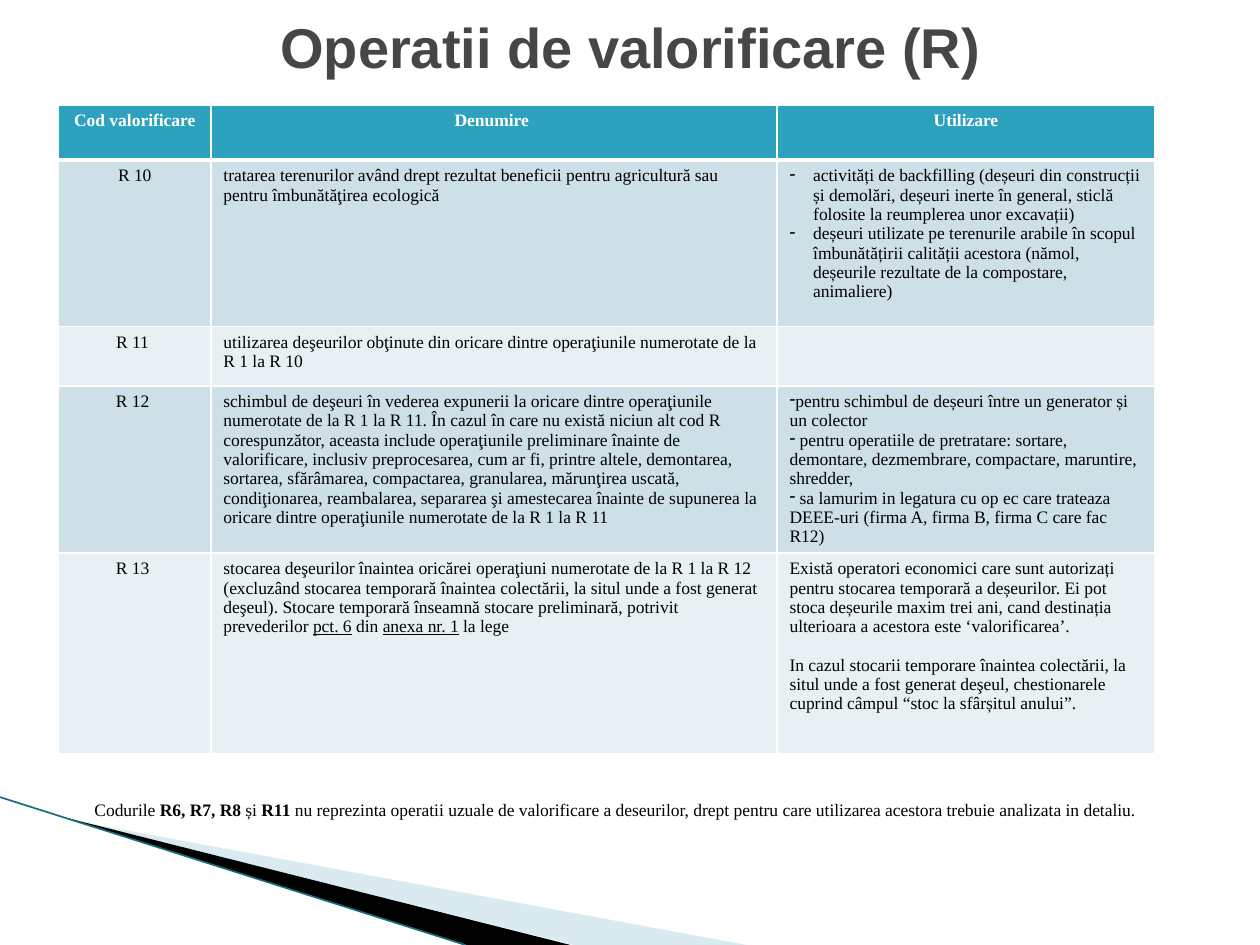
import dataclasses
import typing

import lxml.etree
import pptx
import pptx.dml.color
import pptx.enum.text
import pptx.oxml
import pptx.oxml.ns
import pptx.util

Pt = pptx.util.Pt
qn = pptx.oxml.ns.qn
CENTER = pptx.enum.text.PP_ALIGN.CENTER
LEFT = pptx.enum.text.PP_ALIGN.LEFT
MIDDLE = pptx.enum.text.MSO_ANCHOR.MIDDLE
TOP = pptx.enum.text.MSO_ANCHOR.TOP


@dataclasses.dataclass(frozen=True)
class Run:
    text: str
    bold: bool = False
    underline: bool = False


@dataclasses.dataclass(frozen=True)
class Paragraph:
    runs: tuple[Run, ...]
    bullet: bool = False
    margin: float = 0
    indent: float = 0
    before: float = 0


@dataclasses.dataclass(frozen=True)
class Style:
    font: str = "Times New Roman"
    size: float = 10
    color: str = "000000"
    align: typing.Any = LEFT


@dataclasses.dataclass(frozen=True)
class Wedge:
    points: tuple[tuple[float, float], ...]
    color: str
    opacity: int


@dataclasses.dataclass(frozen=True)
class Operation:
    code: str
    name: tuple[Paragraph, ...]
    usage: tuple[Paragraph, ...]
    height: float


def plain(text: str, **options: typing.Any) -> Paragraph:
    return Paragraph((Run(text),), **options)


def dashed(text: str, hanging: float = 0) -> Paragraph:
    return plain(text, bullet=True, margin=hanging, indent=-hanging)


BODY = Style()
CODE = Style(align=CENTER)
HEADER = Style(color="FFFFFF", align=CENTER)
TITLE = Style("Arial", 32, "464646", CENTER)

COLUMN_WIDTHS = (87, 323.5, 216)
HEADER_HEIGHT = 31.5
HEADINGS = ("Cod valorificare", "Denumire ", "Utilizare")
BANDS = ("CDE0E8", "E8F0F4")

WEDGES = (
    Wedge(((39.6, 468.5), (426.5, 540), (328, 540)), "A0CBDC", 40),
    Wedge(((38.5, 467.5), (326, 540), (266.5, 540)), "000000", 100),
)

OPERATIONS = (
    Operation(
        "R 10",
        (plain("tratarea terenurilor având drept rezultat beneficii pentru agricultură sau pentru îmbunătăţirea ecologică"),),
        (
            dashed("activități de backfilling (deșeuri din construcții și demolări, deșeuri inerte în general, sticlă folosite la reumplerea unor excavații)", 13.5),
            dashed("deșeuri utilizate pe terenurile arabile în scopul îmbunătățirii calității acestora (nămol, deșeurile rezultate de la compostare, animaliere)", 13.5),
        ),
        95,
    ),
    Operation(
        "R 11 ",
        (plain("utilizarea deşeurilor obţinute din oricare dintre operaţiunile numerotate de la R 1 la R 10"),),
        (),
        34,
    ),
    Operation(
        "R 12 ",
        (plain("schimbul de deşeuri în vederea expunerii la oricare dintre operaţiunile numerotate de la R 1 la R 11. În cazul în care nu există niciun alt cod R corespunzător, aceasta include operaţiunile preliminare înainte de valorificare, inclusiv preprocesarea, cum ar fi, printre altele, demontarea, sortarea, sfărâmarea, compactarea, granularea, mărunţirea uscată, condiţionarea, reambalarea, separarea şi amestecarea înainte de supunerea la oricare dintre operaţiunile numerotate de la R 1 la R 11"),),
        (
            dashed("pentru schimbul de deșeuri între un generator și un colector"),
            dashed(" pentru operatiile de pretratare: sortare, demontare, dezmembrare, compactare, maruntire, shredder,"),
            dashed(" sa lamurim in legatura cu op ec care trateaza DEEE-uri (firma A, firma B, firma C care fac R12)"),
        ),
        95.5,
    ),
    Operation(
        "R 13 ",
        (Paragraph((
            Run("stocarea deşeurilor înaintea oricărei operaţiuni numerotate de la R 1 la R 12 (excluzând stocarea temporară înaintea colectării, la situl unde a fost generat deşeul). Stocare temporară înseamnă stocare preliminară, potrivit prevederilor "),
            Run("pct. 6", underline=True),
            Run(" din "),
            Run("anexa nr. 1", underline=True),
            Run(" la lege"),
        )),),
        (
            plain("Există operatori economici care sunt autorizați pentru stocarea temporară a deșeurilor. Ei pot stoca deșeurile maxim trei ani, cand destinația ulterioara a acestora este ‘valorificarea’."),
            plain("In cazul stocarii temporare înaintea colectării, la situl unde a fost generat deşeul, chestionarele cuprind câmpul “stoc la sfârșitul anului”.", before=11),
        ),
        114.5,
    ),
)

FOOTNOTE = Paragraph((
    Run("Codurile "),
    Run("R6, R7, R8 ", bold=True),
    Run("și "),
    Run("R11 ", bold=True),
    Run("nu reprezinta operatii uzuale de valorificare a deseurilor, drept pentru care utilizarea acestora trebuie analizata in detaliu. "),
), margin=8.64)


def paint(color_holder: typing.Any, color: str) -> None:
    color_holder.rgb = pptx.dml.color.RGBColor.from_string(color)


def fill_solid(fill: typing.Any, color: str) -> None:
    fill.solid()
    paint(fill.fore_color, color)


def write(frame: typing.Any, paragraphs: tuple[Paragraph, ...], style: Style) -> None:
    for index, content in enumerate(paragraphs):
        paragraph = frame.add_paragraph() if index else frame.paragraphs[0]
        paragraph.alignment = style.align
        if content.before:
            paragraph.space_before = Pt(content.before)
        properties = paragraph._p.get_or_add_pPr()
        properties.set("marL", str(Pt(content.margin)))
        properties.set("indent", str(Pt(content.indent)))
        if content.bullet:
            lxml.etree.SubElement(properties, qn("a:buChar")).set("char", "-")
        for part in content.runs:
            run = paragraph.add_run()
            run.text = part.text
            run.font.name = style.font
            run.font.size = Pt(style.size)
            run.font.bold = part.bold
            run.font.underline = part.underline
            paint(run.font.color, style.color)


def add_text(slide: typing.Any, box: tuple[float, ...], content: Paragraph, style: Style, anchor: typing.Any) -> None:
    frame = slide.shapes.add_textbox(*map(Pt, box)).text_frame
    frame.word_wrap = True
    frame.vertical_anchor = anchor
    write(frame, (content,), style)


def add_wedge(slide: typing.Any, wedge: Wedge) -> None:
    points = [(Pt(x), Pt(y)) for x, y in wedge.points]
    builder = slide.shapes.build_freeform(*points[0])
    builder.add_line_segments(points[1:], close=True)
    shape = builder.convert_to_shape()
    shape.shadow.inherit = False
    fill_solid(shape.fill, wedge.color)
    shape.line.fill.background()
    color = shape._element.spPr.find(qn("a:solidFill"))[0]
    lxml.etree.SubElement(color, qn("a:alpha")).set("val", str(wedge.opacity * 1000))


def add_edge(slide: typing.Any) -> None:
    line = slide.shapes.add_connector(1, Pt(0), Pt(455.5), Pt(266), Pt(540))
    line.line.width = Pt(0.95)
    paint(line.line.color, "186C80")
    lxml.etree.SubElement(line._element.spPr, qn("a:effectLst"))


def fill_cell(cell: typing.Any, paragraphs: tuple[Paragraph, ...], style: Style, color: str, top: float, bottom: float) -> None:
    properties = cell._tc.get_or_add_tcPr()
    for side, width in (("L", 1), ("R", 1), ("T", top), ("B", bottom)):
        border = lxml.etree.SubElement(properties, qn(f"a:ln{side}"), w=str(Pt(width)))
        solid = lxml.etree.SubElement(border, qn("a:solidFill"))
        lxml.etree.SubElement(solid, qn("a:srgbClr")).set("val", "FFFFFF")
    fill_solid(cell.fill, color)
    write(cell.text_frame, paragraphs, style)


def add_operations_table(slide: typing.Any) -> None:
    heights = (HEADER_HEIGHT, *(operation.height for operation in OPERATIONS))
    table = slide.shapes.add_table(
        len(heights), len(COLUMN_WIDTHS), Pt(33.5), Pt(60), Pt(sum(COLUMN_WIDTHS)), Pt(sum(heights))
    ).table
    for column, width in zip(table.columns, COLUMN_WIDTHS):
        column.width = Pt(width)
    for row, height in zip(table.rows, heights):
        row.height = Pt(height)
    for column, heading in enumerate(HEADINGS):
        fill_cell(table.cell(0, column), (Paragraph((Run(heading, bold=True),)),), HEADER, "2DA2BF", 1, 3)
    for row, operation in enumerate(OPERATIONS, 1):
        contents = ((plain(operation.code),), operation.name, operation.usage)
        for column, (content, style) in enumerate(zip(contents, (CODE, BODY, BODY))):
            fill_cell(table.cell(row, column), content, style, BANDS[(row - 1) % 2], 3 if row == 1 else 1, 1)


def main() -> None:
    presentation = pptx.Presentation()
    presentation.slide_width, presentation.slide_height = Pt(720), Pt(540)
    slide = presentation.slides.add_slide(presentation.slide_layouts[6])
    for wedge in WEDGES:
        add_wedge(slide, wedge)
    add_edge(slide)
    add_operations_table(slide)
    title = Paragraph((Run("Operatii de valorificare (R)", bold=True),))
    add_text(slide, (36.5, 3.6, 648, 45.4), title, TITLE, MIDDLE)
    add_text(slide, (36.5, 453, 623.5, 19.4), FOOTNOTE, CODE, TOP)
    presentation.save("out.pptx")


if __name__ == "__main__":
    main()
